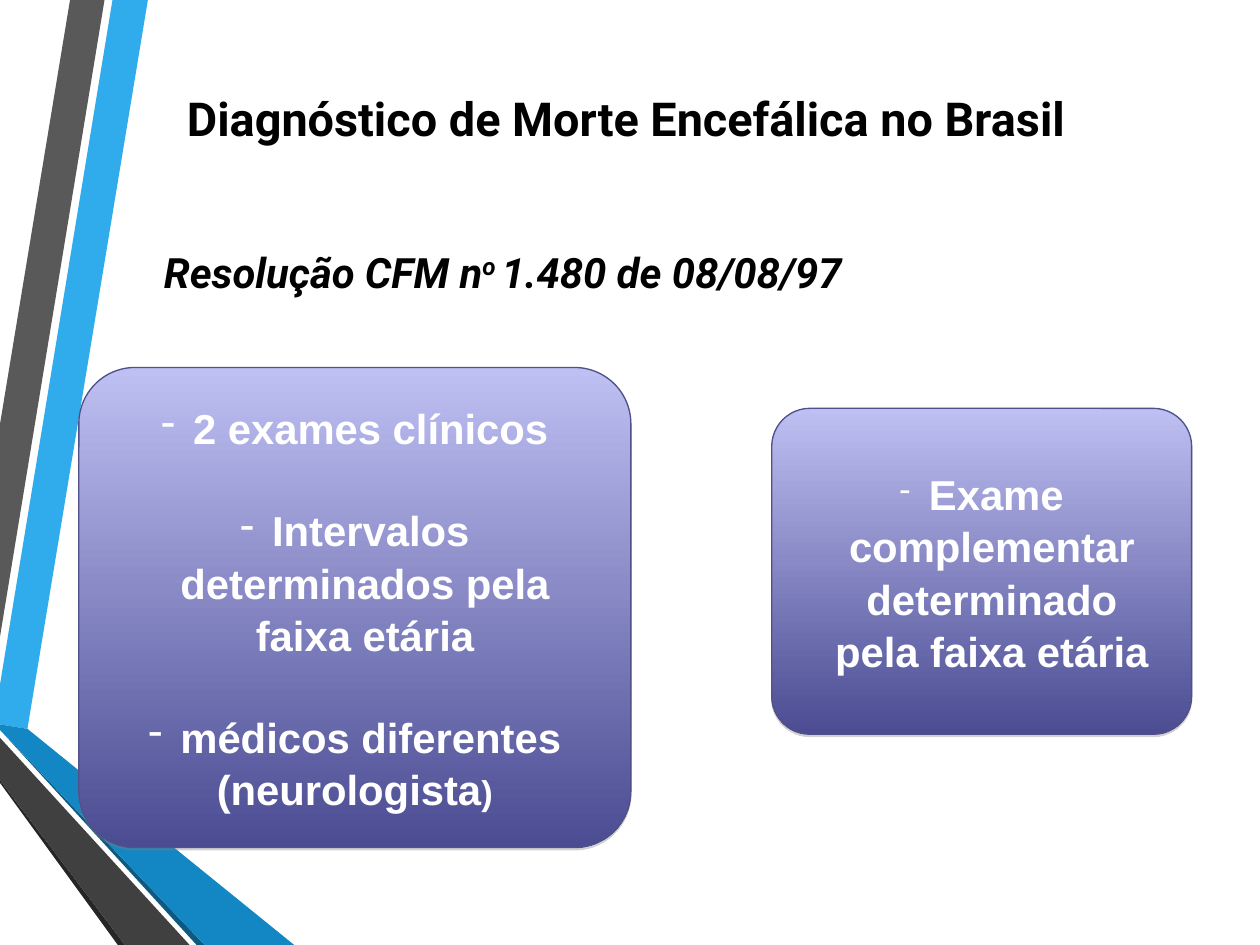
import collections

import lxml.etree
import pptx
import pptx.dml.color
import pptx.enum.shapes
import pptx.enum.text
import pptx.oxml
import pptx.oxml.ns
import pptx.util

COLORS = {
    "sky": "30ACEC", "blue": "1287C3", "navy": "0C5A82",
    "gray": "595959", "dark": "404040", "darkest": "262626",
    "card_top": "BEBFF2", "card_bottom": "4B4C92", "card_line": "505188",
    "shadow": "808080", "text": "000000", "white": "FFFFFF",
}
WIDTH, HEIGHT = pptx.util.Inches(14.22), pptx.util.Inches(10.67)
COLUMN, ROW = WIDTH / 100, HEIGHT / 100  # grid of 100 columns by 100 rows

Box = collections.namedtuple("Box", "left top width height")

# Corner points of each ribbon, in columns and rows
RIBBONS = [
    ("sky", [(0, 72.45), (0, 76.66), (2.18, 77.13), (11.74, 0), (8.93, 0)]),
    ("gray", [(8.3, 0), (5.56, 0), (0, 44.89), (0, 67.39)]),
    ("darkest", [(0, 82.57), (0, 82.85), (9.35, 100), (9.92, 100)]),
    ("navy", [(0, 77.23), (15.61, 100), (16.24, 100)]),
    ("blue", [(0, 77.23), (16.24, 100), (23.35, 100), (2.18, 77.13), (0, 76.66)]),
    ("dark", [(0, 82.57), (9.92, 100), (15.05, 100), (0, 78.07)]),
]

LINE_HEIGHT = 1.04
BLANK_LINE = pptx.util.Pt(40.8)


def color(name):
    return pptx.dml.color.RGBColor.from_string(COLORS[name])


def grid_box(left, top, width, height):
    return Box(round(left * COLUMN), round(top * ROW),
               round(width * COLUMN), round(height * ROW))


def add_run(paragraph, text, size, font_name, color_name, bold=True, italic=False):
    run = paragraph.add_run()
    run.text = text
    run.font.size = pptx.util.Pt(size)
    run.font.name = font_name
    run.font.bold = bold
    run.font.italic = italic
    run.font.color.rgb = color(color_name)
    return run


def set_margins(frame, horizontal, vertical):
    frame.margin_left = frame.margin_right = pptx.util.Inches(horizontal)
    frame.margin_top = frame.margin_bottom = pptx.util.Inches(vertical)


def add_ribbons(slide, box):
    for color_name, corners in RIBBONS:
        points = [(box.left + x * box.width / 100, box.top + y * box.height / 100)
                  for x, y in corners]
        builder = slide.shapes.build_freeform(*points[0], scale=1.0)
        builder.add_line_segments(points[1:], close=True)
        ribbon = builder.convert_to_shape()
        ribbon.shadow.inherit = False
        ribbon.fill.solid()
        ribbon.fill.fore_color.rgb = color(color_name)
        ribbon.line.fill.background()


def place_title(slide, box):
    title = slide.shapes.title
    title.left, title.top, title.width, title.height = box
    frame = title.text_frame
    frame.word_wrap = True
    frame.vertical_anchor = pptx.enum.text.MSO_ANCHOR.MIDDLE
    set_margins(frame, 0, 0)
    paragraph = frame.paragraphs[0]
    paragraph.alignment = pptx.enum.text.PP_ALIGN.CENTER
    add_run(paragraph, "Diagnóstico de Morte Encefálica no Brasil", 38, "Roboto", "text")


def add_resolution(slide, box):
    frame = slide.shapes.add_textbox(*box).text_frame
    frame.word_wrap = True
    set_margins(frame, 0.14, 0.08)
    paragraph = frame.paragraphs[0]
    for text, baseline in [("Resolução CFM n", 0), ("o ", 31000), ("1.480 de 08/08/97", 0)]:
        run = add_run(paragraph, text, 34, "Roboto", "text", italic=True)
        if baseline:
            run.font._element.set("baseline", str(baseline))


def add_dash(paragraph, size):
    properties = paragraph._p.get_or_add_pPr()
    indent = pptx.util.Inches(0.23)
    properties.set("marL", str(indent))
    properties.set("indent", str(-indent))
    bullet_color = lxml.etree.SubElement(properties, pptx.oxml.ns.qn("a:buClr"))
    lxml.etree.SubElement(bullet_color, pptx.oxml.ns.qn("a:srgbClr"), val=COLORS["white"])
    lxml.etree.SubElement(properties, pptx.oxml.ns.qn("a:buChar"), char="-")
    add_run(paragraph, " ", size, "TeX Gyre Schola", "white", bold=False)


def add_soft_shadow(shape):
    shape.shadow.inherit = False
    effects = shape._element.spPr.find(pptx.oxml.ns.qn("a:effectLst"))
    effects.append(pptx.oxml.parse_xml(
        f'<a:outerShdw {pptx.oxml.ns.nsdecls("a")} blurRad="0" dist="22860" '
        f'dir="5400000" rotWithShape="0"><a:srgbClr val="{COLORS["shadow"]}">'
        '<a:alpha val="35000"/></a:srgbClr></a:outerShdw>'))


def add_card(slide, box, items):
    """Each item holds the dash size (0 for none), a blank line flag and its runs."""
    card = slide.shapes.add_shape(
        pptx.enum.shapes.MSO_SHAPE.ROUNDED_RECTANGLE, *box)
    card.adjustments[0] = 0.117
    card.fill.gradient()
    card.fill.gradient_angle = 270
    for stop, color_name, position in zip(
            card.fill.gradient_stops, ("card_top", "card_bottom"), (0, 1)):
        stop.color.rgb = color(color_name)
        stop.position = position
    card.line.color.rgb = color("card_line")
    card.line.width = pptx.util.Pt(1.07)
    add_soft_shadow(card)

    # Card text
    frame = card.text_frame
    frame.word_wrap = True
    frame.vertical_anchor = pptx.enum.text.MSO_ANCHOR.MIDDLE
    set_margins(frame, 0.2, 0.08)
    for index, (dash_size, blank_before, runs) in enumerate(items):
        paragraph = frame.add_paragraph() if index else frame.paragraphs[0]
        paragraph.alignment = pptx.enum.text.PP_ALIGN.CENTER
        paragraph.line_spacing = LINE_HEIGHT
        if blank_before:
            paragraph.space_before = BLANK_LINE
        if dash_size:
            add_dash(paragraph, dash_size)
        for text, size in runs:
            add_run(paragraph, text, size, "Arial", "white")


def main():
    presentation = pptx.Presentation()
    presentation.slide_width, presentation.slide_height = WIDTH, HEIGHT
    slide = presentation.slides.add_slide(presentation.slide_layouts[5])

    add_ribbons(slide, grid_box(0, 0, 100, 100))
    place_title(slide, grid_box(5.13, 9.37, 89.17, 6.09))
    add_resolution(slide, grid_box(12.03, 25.4, 74.61, 6.94))
    add_card(slide, grid_box(6.26, 38.89, 43.81, 50.8), [
        (34, False, [("2 exames clínicos", 34)]),
        (34, True, [("Intervalos determinados pela faixa etária", 34)]),
        (34, True, [("médicos diferentes", 34)]),
        (0, False, [("(neurologista", 34), (")", 28)]),
    ])
    add_card(slide, grid_box(61.25, 43.21, 33.33, 34.49), [
        (26, False, [("Exame complementar determinado pela faixa etária", 34)]),
    ])
    presentation.save("out.pptx")


if __name__ == "__main__":
    main()
